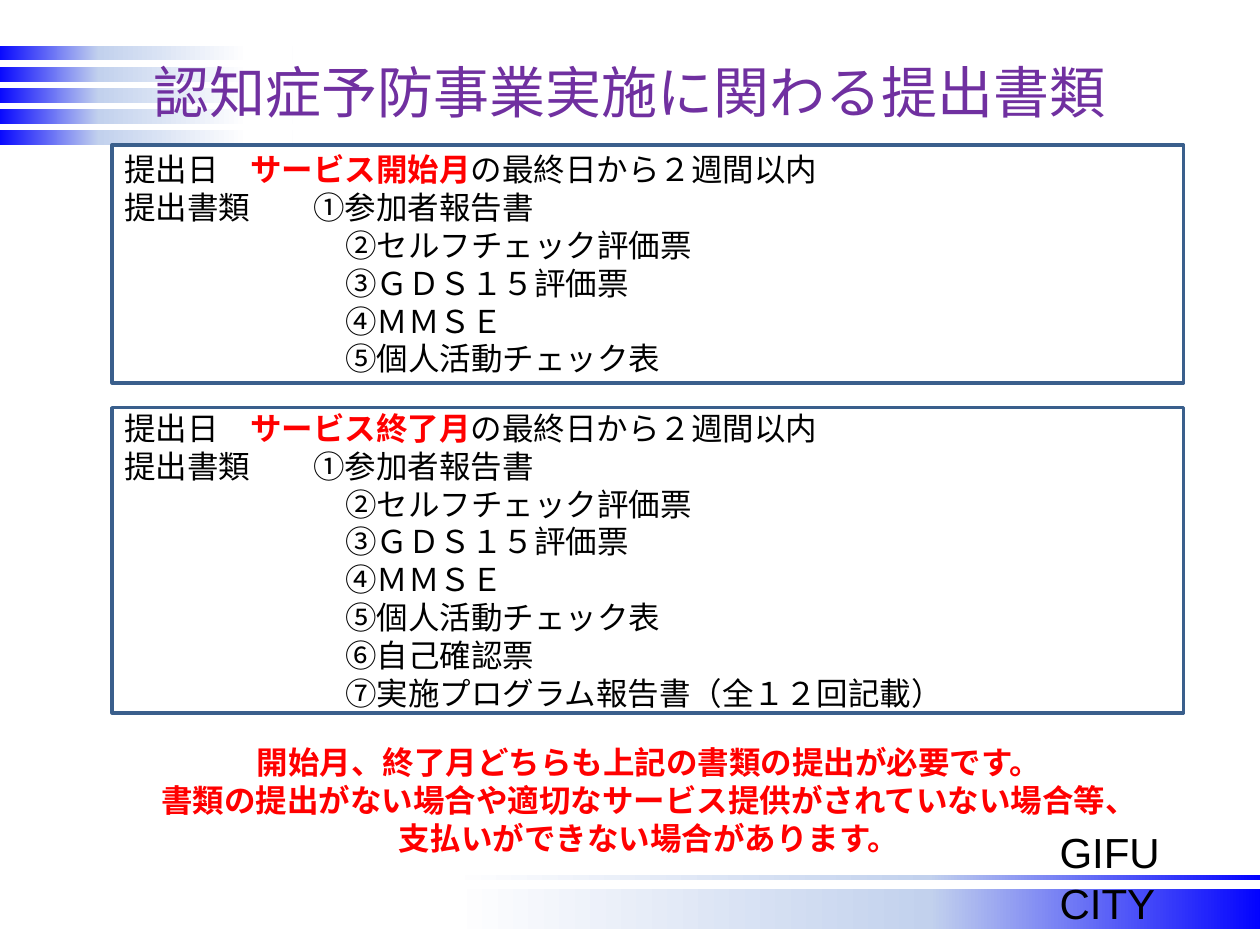
from copy import deepcopy

from lxml import etree
from pptx import Presentation
from pptx import util as u
from pptx.dml import color
from pptx.enum import shapes, text
from pptx.oxml import ns


def rgb(value):
    return color.RGBColor.from_string(value)


class Deck:
    east_asian = "Noto Sans CJK JP"
    latin = "Calibri"
    black, red, purple, border = "000000", "FF0000", "7030A0", "3A5F8C"
    gradient = [(0, "0000FF"), (0.35, "C2D1ED"), (0.85, "FFFFFF")]
    tab, indent = u.Cm(3.18), u.Cm(4.45)
    size, leading = u.Pt(18), u.Pt(21.6)

    def __init__(self):
        self.prs = Presentation()
        self.prs.slide_width, self.prs.slide_height = u.Cm(25.4), u.Cm(19.05)
        self.s = self.prs.slides.add_slide(self.prs.slide_layouts[5])

    def format_run(self, r, tint, size=None, bold=False, font=None):
        r.font.name = font or self.latin
        r.font.size = size or self.size
        r.font.bold = bold
        r.font.color.rgb = rgb(tint)
        ea = etree.SubElement(r.font._element, ns.qn("a:ea"))
        ea.set("typeface", self.east_asian)

    def rectangle(self, left, top, width, height):
        sp = self.s.shapes.add_shape(
            shapes.MSO_SHAPE.RECTANGLE, u.Cm(left), u.Cm(top), u.Cm(width), u.Cm(height))
        sp.shadow.inherit = False
        return sp

    def stripe(self, left, top, width, height, rotation=0):
        sp = self.rectangle(left, top, width, height)
        sp.rotation = rotation
        sp.line.fill.background()
        sp.fill.gradient()
        sp.fill.gradient_angle = 0
        first = sp.element.xpath(".//a:gs")[0]
        first.addnext(deepcopy(first))
        for stop, (position, tint) in zip(sp.fill.gradient_stops, self.gradient):
            stop.position = position
            stop.color.rgb = rgb(tint)

    def title(self, words, left, top, width, height):
        sp = self.s.shapes.title
        sp.left, sp.top, sp.width, sp.height = map(u.Cm, (left, top, width, height))
        sp.element.getparent().append(sp.element)
        tf = sp.text_frame
        tf.text = words
        tf.vertical_anchor = text.MSO_ANCHOR.MIDDLE
        p = tf.paragraphs[0]
        p.alignment = text.PP_ALIGN.CENTER
        self.format_run(p.runs[0], self.purple, u.Pt(32), font=self.east_asian)

    def label(self, words, left, top, width, height):
        sp = self.s.shapes.add_textbox(u.Cm(left), u.Cm(top), u.Cm(width), u.Cm(height))
        tf = sp.text_frame
        tf.word_wrap = True
        tf.text = words
        self.format_run(tf.paragraphs[0].runs[0], self.black, u.Pt(24), font="Arial")

    def notice(self, lines, left, top, width, height):
        sp = self.s.shapes.add_textbox(u.Cm(left), u.Cm(top), u.Cm(width), u.Cm(height))
        tf = sp.text_frame
        tf.word_wrap = True
        tf.vertical_anchor = text.MSO_ANCHOR.MIDDLE
        tf.text = "\n".join(lines)
        for p in tf.paragraphs:
            p.alignment = text.PP_ALIGN.CENTER
            p.line_spacing = self.leading
            self.format_run(p.runs[0], self.red, bold=True)

    def paragraph(self, p, parts, indent=0, tabbed=False):
        p.alignment = text.PP_ALIGN.LEFT
        pPr = p._p.get_or_add_pPr()
        pPr.set("marL", str(int(indent)))
        pPr.set("indent", "0")
        if tabbed:
            tabs = etree.SubElement(pPr, ns.qn("a:tabLst"))
            etree.SubElement(tabs, ns.qn("a:tab"), pos=str(int(self.tab)), algn="l")
        p.line_spacing = self.leading
        for words, emphasis in parts:
            r = p.add_run()
            r.text = words
            self.format_run(r, self.red if emphasis else self.black, bold=emphasis)

    def document_box(self, month, documents, left, top, width, height):
        sp = self.rectangle(left, top, width, height)
        sp.fill.background()
        sp.line.color.rgb = rgb(self.border)
        sp.line.width = u.Pt(2)
        tf = sp.text_frame
        tf.word_wrap = True
        tf.vertical_anchor = text.MSO_ANCHOR.MIDDLE
        deadline = [("提出日\t", False), (month, True), ("の最終日から２週間以内", False)]
        self.paragraph(tf.paragraphs[0], deadline, tabbed=True)
        self.paragraph(tf.add_paragraph(), [("提出書類\t" + documents[0], False)], tabbed=True)
        for name in documents[1:]:
            self.paragraph(tf.add_paragraph(), [(name, False)], indent=self.indent)


def main():
    deck = Deck()
    deck.stripe(6.2, 17.93, 19.3, 0.79, rotation=180)
    for i in range(5):
        deck.stripe(-0.1, 0.92 + 0.425 * i, 6, 0.3)
    deck.stripe(6.17, 17.63, 19.3, 0.1, rotation=180)
    deck.label("GIFU CITY", 21.11, 16.54, 4.06, 1.27)
    deck.title("認知症予防事業実施に関わる提出書類", 1.27, 0.76, 22.86, 2.16)
    deck.notice(
        ["開始月、終了月どちらも上記の書類の提出が必要です。",
         "書類の提出がない場合や適切なサービス提供がされていない場合等、",
         "支払いができない場合があります。"],
        1.98, 14.53, 22.2, 3.2)
    documents = ["①参加者報告書", "②セルフチェック評価票", "③ＧＤＳ１５評価票",
                 "④ＭＭＳＥ", "⑤個人活動チェック表"]
    final_documents = documents + ["⑥自己確認票", "⑦実施プログラム報告書（全１２回記載）"]
    deck.document_box("サービス開始月", documents, 2.26, 2.92, 21.6, 4.8)
    deck.document_box("サービス終了月", final_documents, 2.26, 8.22, 21.6, 6.15)
    deck.prs.save("out.pptx")


if __name__ == "__main__":
    main()
